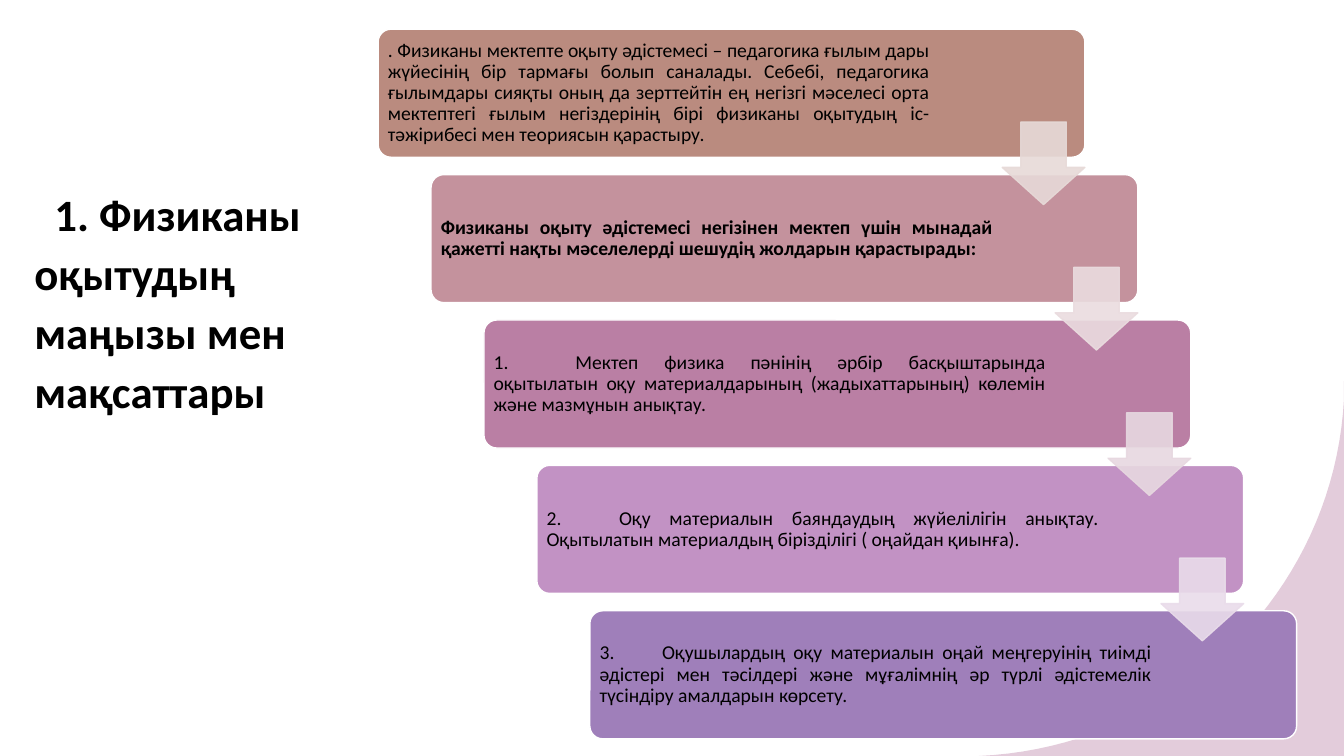
import pptx
import pptx.util
import pptx.dml.color
import pptx.enum.shapes
import pptx.enum.text
import pptx.oxml.ns
from dataclasses import dataclass
from lxml import etree
from pptx.util import Inches

TITLE = "1. Физиканы оқытудың маңызы мен мақсаттары"

# text, bold, right margin, tab stop after the number (None when unnumbered)
STEPS = [
    (". Физиканы мектепте оқыту әдістемесі – педагогика ғылым дары жүйесінің бір тармағы "
     "болып саналады. Себебі, педагогика ғылымдары сияқты оның да зерттейтін ең негізгі "
     "мәселесі орта мектептегі ғылым негіздерінің бірі физиканы оқытудың іс- тәжірибесі "
     "мен теориясын қарастыру.", False, 1.5, None),
    ("Физиканы оқыту әдістемесі негізінен мектеп үшін мынадай қажетті нақты мәселелерді "
     "шешудің жолдарын қарастырады:", True, 1.4, None),
    ("1.\tМектеп физика пәнінің әрбір басқыштарында оқытылатын оқу материалдарының "
     "(жадыхаттарының) көлемін және мазмұнын анықтау.", False, 1.4, 0.81),
    ("2.\tОқу материалын баяндаудың жүйелілігін анықтау. Оқытылатын материалдың "
     "бірізділігі ( оңайдан қиынға).", False, 1.4, 0.72),
    ("3.\tОқушылардың оқу материалын оңай меңгеруінің тиімді әдістері мен тәсілдері және "
     "мұғалімнің әр түрлі әдістемелік түсіндіру амалдарын көрсету.", False, 1.4, 0.62),
]


@dataclass(frozen=True)
class Theme:
    font: str = "Calibri"
    title_size: int = 32
    step_size: int = 14
    text: str = "000000"
    outline: str = "FFFFFF"
    corner: str = "E3CCDB"
    cards: tuple = ("BA8B7F", "C4929D", "BA7FA4", "C292C4", "9F7FBA")
    arrows: tuple = ("E7DAD8", "EADCDF", "E7D8E0", "E9DCEA")
    arrow_opacity: int = 90


THEME = Theme()
SLIDE_WIDTH, SLIDE_HEIGHT = 13.33, 7.5
CARD_LEFT, CARD_TOP, CARD_WIDTH, CARD_HEIGHT = 3.75, 0.29, 7.01, 1.27
LAST_LEFT, LAST_TOP = 5.85, 6.06
STEP_X = (LAST_LEFT - CARD_LEFT) / (len(STEPS) - 1)
STEP_Y = (LAST_TOP - CARD_TOP) / (len(STEPS) - 1)
ARROW_SIZE, ARROW_DROP = 0.82, 0.92
CARD_INSET = 0.06
CORNER_START, CORNER_END = (9.71, 7.5), (13.33, 3.96)
CORNER_CONTROLS = (11.67, 7.41), (13.23, 5.87)


def rgb(color):
    return pptx.dml.color.RGBColor.from_string(color)


def paint(shape, fill, line=None, opacity=100):
    shape.shadow.inherit = False
    shape.fill.solid()
    shape.fill.fore_color.rgb = rgb(fill)
    if line is None:
        shape.line.fill.background()
    else:
        shape.line.color.rgb = rgb(line)
        shape.line.width = pptx.util.Pt(1)
    if opacity < 100:
        for color in shape._element.spPr.iter(pptx.oxml.ns.qn("a:srgbClr")):
            alpha = etree.SubElement(color, pptx.oxml.ns.qn("a:alpha"))
            alpha.set("val", str(opacity * 1000))


def write(paragraph, text, size, bold):
    run = paragraph.add_run()
    run.text = text
    run.font.name = THEME.font
    run.font.size = pptx.util.Pt(size)
    run.font.bold = bold
    run.font.color.rgb = rgb(THEME.text)


def add_title(slide):
    title = slide.shapes.title
    title.left, title.top = Inches(0.24), Inches(1.75)
    title.width, title.height = Inches(3.28), Inches(3.89)
    frame = title.text_frame
    frame.word_wrap = True
    frame.auto_size = pptx.enum.text.MSO_AUTO_SIZE.NONE
    frame.vertical_anchor = pptx.enum.text.MSO_ANCHOR.TOP
    paragraph = frame.paragraphs[0]
    paragraph.alignment = pptx.enum.text.PP_ALIGN.LEFT
    paragraph.line_spacing = 1.1
    paragraph._p.get_or_add_pPr().set("indent", str(Inches(0.2)))
    write(paragraph, TITLE, THEME.title_size, True)


def add_corner(slide, segments=40):
    """Fill the lower right corner up to a cubic curve."""
    nodes = (CORNER_START, *CORNER_CONTROLS, CORNER_END)
    curve = []
    for index in range(segments + 1):
        t = index / segments
        weights = ((1 - t) ** 3, 3 * t * (1 - t) ** 2, 3 * t ** 2 * (1 - t), t ** 3)
        curve.append(tuple(Inches(sum(w * node[axis] for w, node in zip(weights, nodes)))
                           for axis in (0, 1)))
    builder = slide.shapes.build_freeform(Inches(SLIDE_WIDTH), Inches(3.78))
    corner = (Inches(SLIDE_WIDTH), Inches(SLIDE_HEIGHT))
    builder.add_line_segments([corner, (Inches(9.63), Inches(SLIDE_HEIGHT)), *curve])
    paint(builder.convert_to_shape(), THEME.corner)


def add_card(slide, index, text, bold, right_margin, tab_stop):
    card = slide.shapes.add_shape(
        pptx.enum.shapes.MSO_SHAPE.ROUNDED_RECTANGLE,
        Inches(CARD_LEFT + index * STEP_X), Inches(CARD_TOP + index * STEP_Y),
        Inches(CARD_WIDTH), Inches(CARD_HEIGHT))
    card.adjustments[0] = 0.1
    paint(card, THEME.cards[index], THEME.outline)
    frame = card.text_frame
    frame.word_wrap = True
    frame.vertical_anchor = pptx.enum.text.MSO_ANCHOR.MIDDLE
    frame.margin_left = frame.margin_top = frame.margin_bottom = Inches(CARD_INSET)
    frame.margin_right = Inches(right_margin)
    paragraph = frame.paragraphs[0]
    paragraph.alignment = pptx.enum.text.PP_ALIGN.JUSTIFY
    paragraph.line_spacing = 0.9
    if tab_stop is not None:
        properties = paragraph._p.get_or_add_pPr()
        tabs = etree.SubElement(properties, pptx.oxml.ns.qn("a:tabLst"))
        tab = etree.SubElement(tabs, pptx.oxml.ns.qn("a:tab"))
        tab.set("pos", str(Inches(tab_stop)))
        tab.set("algn", "l")
    write(paragraph, text, THEME.step_size, bold)


def add_arrow(slide, index, color):
    arrow = slide.shapes.add_shape(
        pptx.enum.shapes.MSO_SHAPE.DOWN_ARROW,
        Inches(CARD_LEFT + index * STEP_X + CARD_WIDTH - ARROW_SIZE),
        Inches(CARD_TOP + index * STEP_Y + ARROW_DROP),
        Inches(ARROW_SIZE), Inches(ARROW_SIZE))
    # the shaft width is the second adjustment's counterpart, listed first
    arrow.adjustments[0] = 0.55
    arrow.adjustments[1] = 0.45
    paint(arrow, color, color, THEME.arrow_opacity)


def main():
    presentation = pptx.Presentation()
    presentation.slide_width = Inches(SLIDE_WIDTH)
    presentation.slide_height = Inches(SLIDE_HEIGHT)
    slide = presentation.slides.add_slide(presentation.slide_layouts.get_by_name("Title Only"))
    add_title(slide)
    add_corner(slide)
    for index, step in enumerate(STEPS):
        add_card(slide, index, *step)
    for index, color in enumerate(THEME.arrows):
        add_arrow(slide, index, color)
    presentation.save("out.pptx")


if __name__ == "__main__":
    main()
